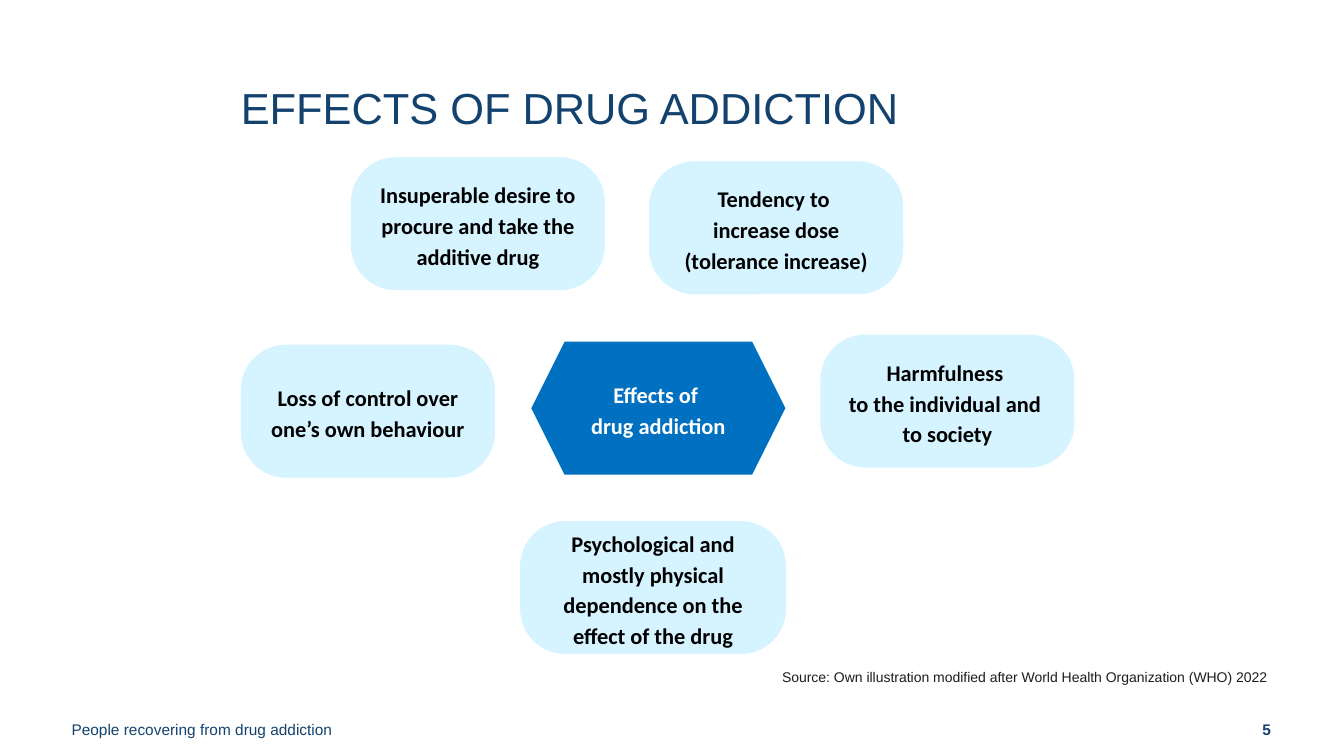
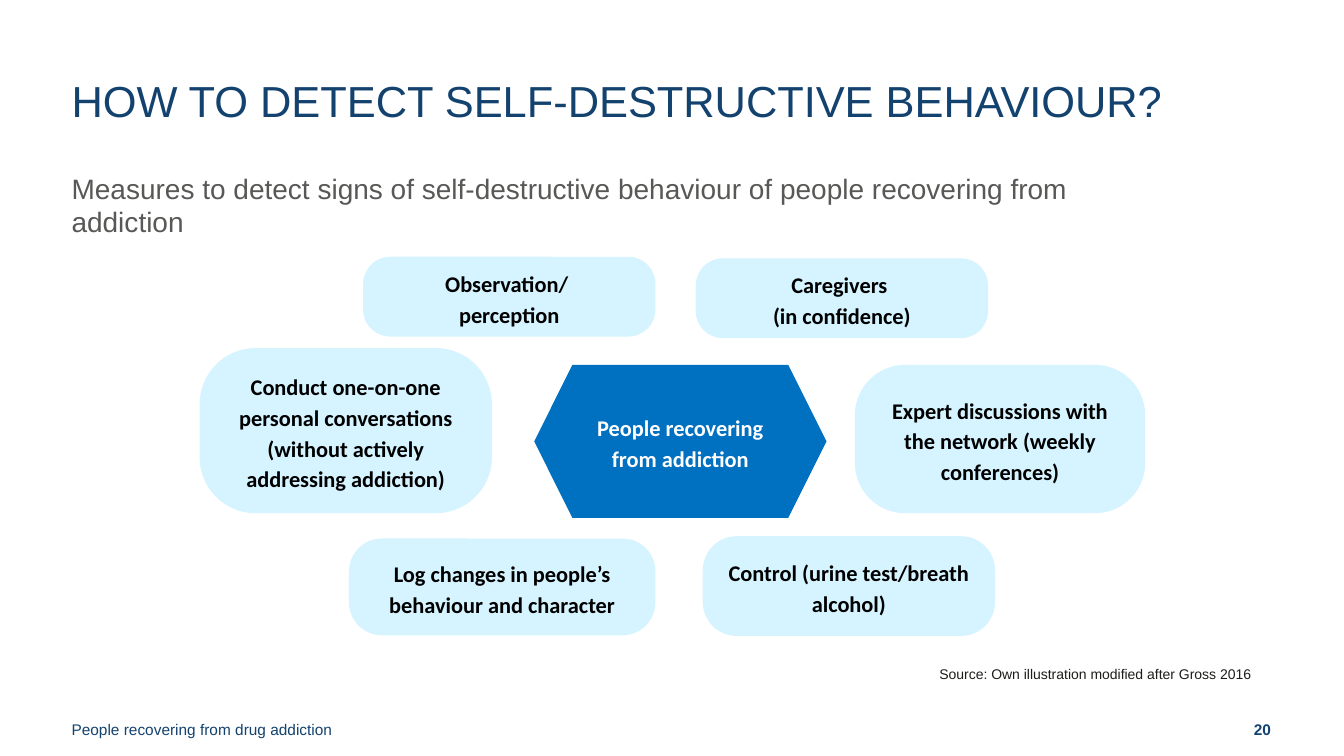
from dataclasses import dataclass

from pptx import Presentation
from pptx.dml.color import RGBColor
from pptx.enum.shapes import MSO_SHAPE
from pptx.enum.text import MSO_ANCHOR, PP_ALIGN
from pptx.util import Pt

ROUND, HEXAGON = MSO_SHAPE.ROUNDED_RECTANGLE, MSO_SHAPE.HEXAGON
LEFT, CENTER, RIGHT = PP_ALIGN.LEFT, PP_ALIGN.CENTER, PP_ALIGN.RIGHT
TOP, MIDDLE, BOTTOM = MSO_ANCHOR.TOP, MSO_ANCHOR.MIDDLE, MSO_ANCHOR.BOTTOM


@dataclass(frozen=True)
class Theme:
    navy: str = "13426F"
    gray: str = "585857"
    ink: str = "1D1D1B"
    black: str = "000000"
    white: str = "FFFFFF"
    pale: str = "D5F4FF"
    blue: str = "0070C0"
    sans: str = "Arial"
    label: str = "Calibri"
    title_size: int = 31
    subtitle_size: int = 20
    node_size: int = 16
    footer_size: int = 11
    source_size: int = 10


T = Theme()
W, H = 960, 540
MARGIN = 51.1
FOOTER = "People recovering from drug addiction"
FOOTER_TOP, FOOTER_H = 496.1, 43.2


def set_text(sp, text, size, color, font=T.sans, bold=False, align=LEFT,
             anchor=TOP, spacing=None, insets=(7.2, 3.6, 7.2, 3.6)):
    tf = sp.text_frame
    tf.word_wrap = True
    tf.vertical_anchor = anchor
    tf.margin_left, tf.margin_top, tf.margin_right, tf.margin_bottom = map(Pt, insets)
    p = tf.paragraphs[0]
    p.text = text
    p.alignment = align
    p.line_spacing = spacing
    p.font.name, p.font.size, p.font.bold = font, Pt(size), bold
    p.font.color.rgb = RGBColor.from_string(color)


def add_text(s, box, text, size, color, **style):
    set_text(s.shapes.add_textbox(*map(Pt, box)), text, size, color, **style)


slides = [
    {
        "number": "5",
        "title": ("EFFECTS OF DRUG ADDICTION", (172, 57.6, 615.6, 80.6)),
        "subtitle": None,
        "center": ("Effects of \ndrug addiction", (379.5, 244.1, 181.5, 95)),
        "nodes": [
            ("Tendency to \nincrease dose (tolerance increase)", (463.7, 115.2, 181.5, 95)),
            ("Insuperable desire to procure and take the additive drug", (250.6, 112.3, 181.5, 95)),
            ("Loss of control over one’s own behaviour", (172, 246.2, 181.5, 95)),
            ("Harmfulness \nto the individual and \nto society", (586, 239, 181.5, 95)),
            ("Psychological and mostly physical dependence on the effect of the drug",
             (371.5, 372.2, 190, 95)),
        ],
        "source": ("Source: Own illustration modified after World Health Organization (WHO) 2022",
                   (551.5, 473.8, 395.3, 19.4)),
    },
    {
        "number": "20",
        "title": ("HOW TO DETECT SELF-DESTRUCTIVE BEHAVIOUR?", (MARGIN, 52.6, 872, 80.6)),
        "subtitle": "Measures to detect signs of self-destructive behaviour of people "
                    "recovering from addiction",
        "center": ("People recovering from addiction", (381.6, 260.6, 208.8, 109.4)),
        "nodes": [
            ("Caregivers \n(in confidence)", (497, 184.5, 208.8, 57)),
            ("Observation/ \nperception", (259.4, 183.4, 208.8, 57)),
            ("Conduct one-on-one personal conversations (without actively addressing addiction)",
             (142.6, 248.6, 208.8, 118)),
            ("Control (urine test/breath alcohol)", (502, 383, 208.8, 71.3)),
            ("Log changes in people’s behaviour and character", (249.3, 384.7, 218.9, 69.1)),
            ("Expert discussions with the network (weekly conferences)",
             (610.6, 260.6, 207.4, 106)),
        ],
        "source": ("Source: Own illustration modified after Gross 2016",
                   (663.9, 471.7, 244.8, 19.4)),
    },
]

prs = Presentation()
prs.slide_width, prs.slide_height = Pt(W), Pt(H)

for page in slides:
    s = prs.slides.add_slide(prs.slide_layouts[6])

    add_text(s, (0, FOOTER_TOP, 324, FOOTER_H), FOOTER, T.footer_size, T.navy,
             anchor=BOTTOM, spacing=Pt(13.3), insets=(MARGIN, 3.6, 0, 11.5))
    add_text(s, (743, FOOTER_TOP, 216, FOOTER_H), page["number"], T.footer_size, T.navy,
             bold=True, align=RIGHT, anchor=BOTTOM, spacing=Pt(13.3),
             insets=(0, 3.6, MARGIN, 11.5))

    title, box = page["title"]
    add_text(s, box, title, T.title_size, T.navy, spacing=Pt(34), insets=(0, 3.6, 7.2, 3.6))
    if page["subtitle"]:
        add_text(s, (MARGIN, 119.5, 777.6, 56), page["subtitle"], T.subtitle_size, T.gray,
                 spacing=Pt(24), insets=(0, 2.9, 7.2, 3.6))

    nodes = [(ROUND, T.pale, T.black, *node) for node in page["nodes"]]
    nodes.append((HEXAGON, T.blue, T.white, *page["center"]))
    for kind, fill, color, text, box in nodes:
        sp = s.shapes.add_shape(kind, *map(Pt, box))
        if kind == ROUND:
            sp.adjustments[0] = 0.34
        sp.shadow.inherit = False
        sp.fill.solid()
        sp.fill.fore_color.rgb = RGBColor.from_string(fill)
        sp.line.fill.background()
        set_text(sp, text, T.node_size, color, font=T.label, bold=True, align=CENTER,
                 anchor=MIDDLE, spacing=1.15)

    source, box = page["source"]
    add_text(s, box, source, T.source_size, T.ink)

prs.save("out.pptx")
